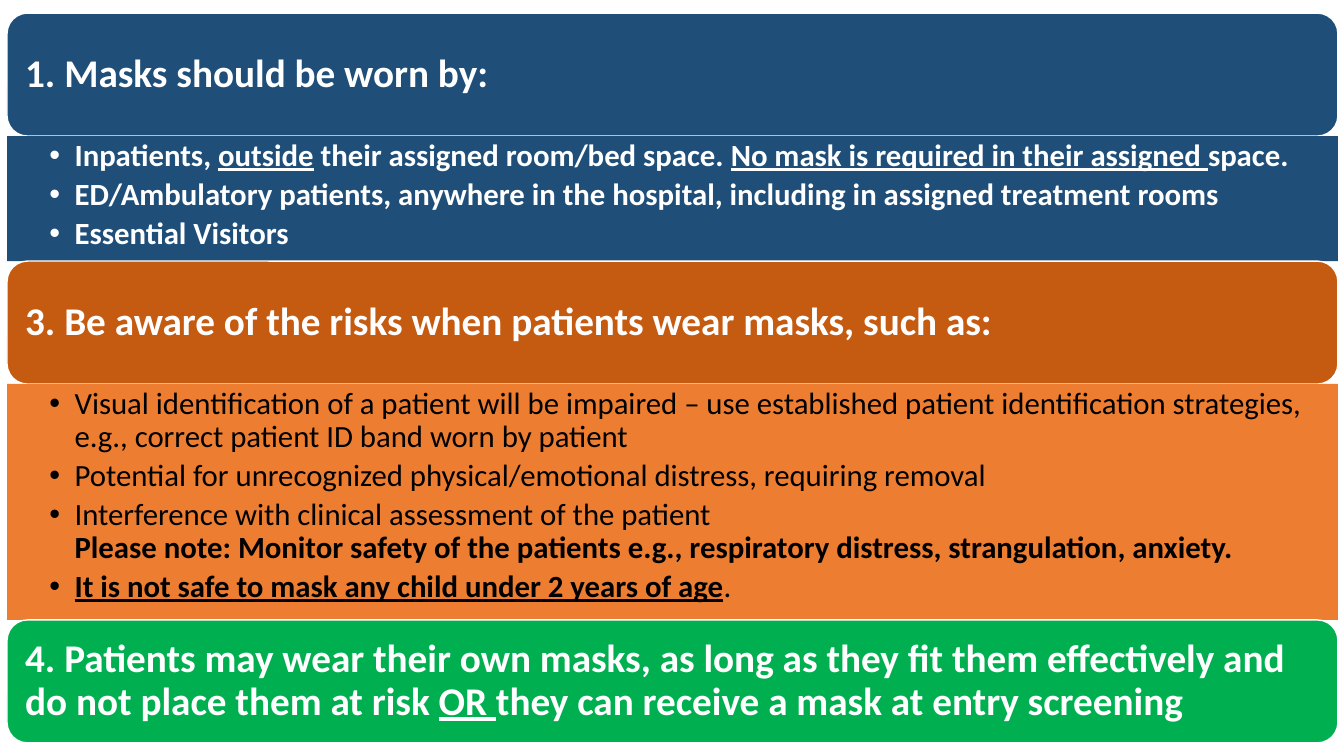
from dataclasses import dataclass

from lxml import etree
from pptx import Presentation
from pptx import util as u
from pptx.dml.color import RGBColor
from pptx.enum import shapes, text
from pptx.oxml.ns import qn

PX = u.Inches(1) // 100


@dataclass(frozen=True)
class Theme:
    font: str = "Calibri"
    heading_size: int = 28
    body_size: int = 22
    white: str = "FFFFFF"
    black: str = "000000"
    blue: str = "1F4E79"
    rust: str = "C55A11"
    orange: str = "ED7D31"
    green: str = "00B050"


THEME = Theme()
LEFT, TOP, WIDTH = 7, 13, 1320
HEADING_HEIGHT = 122

MASK_WEARERS = [
    [
        ("Inpatients, ", {}),
        ("outside", {"underline": True}),
        (" their assigned room/bed space. ", {}),
        ("No mask is required in their assigned ", {"underline": True}),
        ("space.", {}),
    ],
    [("ED/Ambulatory patients, anywhere in the hospital, including in assigned treatment rooms", {})],
    [("Essential Visitors", {})],
]
RISKS = [
    [("Visual identification of a patient will be impaired – use established patient "
      "identification strategies, e.g., correct patient ID band worn by patient", {})],
    [("Potential for unrecognized physical/emotional distress, requiring removal", {})],
    [
        ("Interference with clinical assessment of the patient\n", {}),
        ("Please note: Monitor safety of the patients e.g., respiratory distress, "
         "strangulation, anxiety.", {"bold": True}),
    ],
    [
        ("It is not safe to mask any child under 2 years of age", {"bold": True, "underline": True}),
        (".", {}),
    ],
]
OWN_MASKS = [
    ("4. Patients may wear their own masks, as long as they fit them effectively and "
     "do not place them at risk ", {}),
    ("OR ", {"underline": True}),
    ("they can receive a mask at entry screening", {}),
]


def add_text(paragraph, content, *, size, color, bold=False, underline=False):
    lines = content.split("\n")
    for index, line in enumerate(lines):
        if index:
            paragraph.add_line_break()
        if line:
            run = paragraph.add_run()
            run.text = line
            run.font.name = THEME.font
            run.font.size = u.Pt(size)
            run.font.color.rgb = RGBColor.from_string(color)
            run.font.bold = bold
            run.font.underline = underline


def add_block(slide, kind, top, height, fill, margins, anchor):
    shape = slide.shapes.add_shape(kind, LEFT * PX, top * PX, WIDTH * PX, height * PX)
    shape.shadow.inherit = False
    shape.fill.solid()
    shape.fill.fore_color.rgb = RGBColor.from_string(fill)
    frame = shape.text_frame
    frame.word_wrap = True
    frame.vertical_anchor = anchor
    frame.margin_left, frame.margin_top, frame.margin_right, frame.margin_bottom = (
        margin * PX for margin in margins
    )
    return shape


def format_paragraph(paragraph, space_after):
    paragraph.alignment = text.PP_ALIGN.LEFT
    paragraph.line_spacing = 0.9
    paragraph.space_before = u.Pt(0)
    paragraph.space_after = u.Pt(space_after)


def set_bullet(paragraph):
    paragraph.level = 1
    properties = paragraph._p.get_or_add_pPr()
    properties.set("marL", str(25 * PX))
    properties.set("indent", str(-25 * PX))
    etree.SubElement(properties, qn("a:buFont")).set("typeface", "Arial")
    etree.SubElement(properties, qn("a:buChar")).set("char", "•")


def add_heading(slide, top, fill, runs):
    shape = add_block(
        slide, shapes.MSO_SHAPE.ROUNDED_RECTANGLE, top, HEADING_HEIGHT, fill,
        (12, 12, 12, 12), text.MSO_ANCHOR.MIDDLE,
    )
    shape.line.color.rgb = RGBColor.from_string(THEME.white)
    shape.line.width = u.Pt(1)
    paragraph = shape.text_frame.paragraphs[0]
    format_paragraph(paragraph, 0)
    for content, style in runs:
        add_text(paragraph, content, size=THEME.heading_size, color=THEME.white, bold=True, **style)
    return top + HEADING_HEIGHT


def add_bullets(slide, top, height, fill, color, items, bold=False):
    shape = add_block(
        slide, shapes.MSO_SHAPE.RECTANGLE, top, height, fill,
        (42, 4, 22, 4), text.MSO_ANCHOR.TOP,
    )
    shape.line.fill.background()
    frame = shape.text_frame
    for index, runs in enumerate(items):
        paragraph = frame.add_paragraph() if index else frame.paragraphs[0]
        set_bullet(paragraph)
        format_paragraph(paragraph, 4)
        for content, style in runs:
            add_text(paragraph, content, **{
                "size": THEME.body_size, "color": color, "bold": bold, **style,
            })
    return top + height


def main():
    presentation = Presentation()
    presentation.slide_width = 1333 * PX
    presentation.slide_height = 750 * PX
    slide = presentation.slides.add_slide(presentation.slide_layouts[6])

    top = add_heading(slide, TOP, THEME.blue, [("1. Masks should be worn by:", {})])
    top = add_bullets(slide, top, 124, THEME.blue, THEME.white, MASK_WEARERS, bold=True)
    top = add_heading(
        slide, top, THEME.rust,
        [("3. Be aware of the risks when patients wear masks, such as:", {})],
    )
    top = add_bullets(slide, top, 234, THEME.orange, THEME.black, RISKS)
    add_heading(slide, top, THEME.green, OWN_MASKS)

    presentation.save("out.pptx")


if __name__ == "__main__":
    main()
